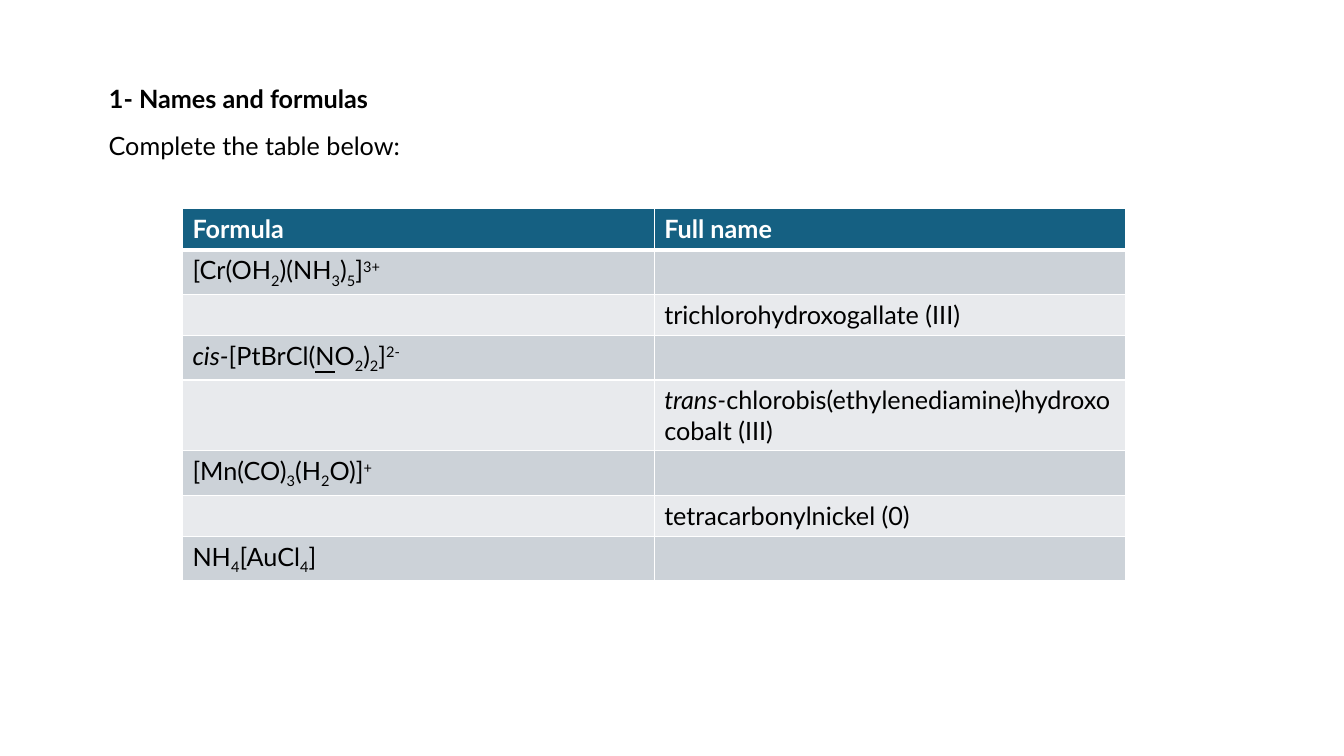
"""Build the exercise slide on names and formulas of coordination complexes."""
from lxml.etree import SubElement
from pptx import Presentation
from pptx.dml.color import RGBColor
from pptx.enum.text import MSO_ANCHOR, MSO_AUTO_SIZE, PP_ALIGN
from pptx.oxml.ns import qn
from pptx.util import Emu, Inches, Pt

SLIDE_WIDTH, SLIDE_HEIGHT = Inches(13.33), Inches(7.5)
COLUMN, ROW = SLIDE_WIDTH / 40, SLIDE_HEIGHT / 18
LEFT_MARGIN, LINE_HEIGHT, TABLE_ROW = 2.94, 0.96, 0.98
FONT, SIZE = "Lato", 18
BLACK, WHITE, HEADER = "000000", "FFFFFF", "156082"
BANDS = ("CCD2D8", "E8EAED")

HEADINGS = ("Formula", "Full name")
COMPLEXES = (
    ("[Cr(OH|_2|)(NH|_3|)|_5|]|^3+", ""),
    ("", "trichlorohydroxogallate (III)"),
    ("/cis-|[PtBrCl(|~N|O|_2|)|_2|]|^2-", ""),
    ("", "/trans-|chlorobis(ethylenediamine)hydroxo cobalt (III)"),
    ("[Mn(CO)|_3|(H|_2|O)]|^+", ""),
    ("", "tetracarbonylnickel (0)"),
    ("NH|_4|[AuCl|_4|]", ""),
)


def color(hex_value):
    """Return the colour for a hex string."""
    return RGBColor.from_string(hex_value)


def grid(left, top, width, height):
    """Turn grid columns and rows into a left, top, width and height."""
    units = (COLUMN, ROW, COLUMN, ROW)
    return [Emu(round(n * unit)) for n, unit in zip((left, top, width, height), units)]


def format_run(run, hex_value=BLACK, bold=False):
    """Give a run the slide's font with a colour and weight."""
    font = run.font
    font.name, font.size, font.bold = FONT, Pt(SIZE), bold
    font.color.rgb = color(hex_value)


def write_formula(paragraph, markup, hex_value, bold):
    """Write parts split by |, marked _ subscript, ^ superscript, / italic or ~ underline."""
    paragraph.font.size = Pt(SIZE)
    for part in filter(None, markup.split("|")):
        mark = part[0] if part[0] in "_^/~" else ""
        run = paragraph.add_run()
        run.text = part[len(mark):]
        format_run(run, hex_value, bold)
        if mark == "/":
            run.font.italic = True
        elif mark == "~":
            run.font.underline = True
        elif mark:
            baseline = {"_": "-25000", "^": "30000"}[mark]
            run.font._element.set("baseline", baseline)


def set_borders(cell, bottom_width):
    """Draw white lines around a cell, with its own bottom width."""
    properties = cell._tc.get_or_add_tcPr()
    for side, width in (("L", 1), ("R", 1), ("T", 1), ("B", bottom_width)):
        line = SubElement(properties, qn(f"a:ln{side}"), w=str(Pt(width)))
        fill = SubElement(line, qn("a:solidFill"))
        SubElement(fill, qn("a:srgbClr"), val=WHITE)


def fill_cell(cell, markup, fill, hex_value=BLACK, bold=False, bottom_width=1):
    """Write and format one table cell."""
    set_borders(cell, bottom_width)
    cell.fill.solid()
    cell.fill.fore_color.rgb = color(fill)
    write_formula(cell.text_frame.paragraphs[0], markup, hex_value, bold)


def set_line(shape, text, place, bold=False):
    """Place a shape and give it one line of left-aligned text."""
    shape.left, shape.top, shape.width, shape.height = place
    frame = shape.text_frame
    frame.text = text
    frame.word_wrap = True
    frame.auto_size = MSO_AUTO_SIZE.SHAPE_TO_FIT_TEXT
    frame.vertical_anchor = MSO_ANCHOR.TOP
    paragraph = frame.paragraphs[0]
    paragraph.alignment = PP_ALIGN.LEFT
    format_run(paragraph.runs[0], bold=bold)


def add_complex_table(slide):
    """Add the table of formulas and full names."""
    row_count = len(COMPLEXES) + 1
    place = grid(5.43, 4.97, 28.08, TABLE_ROW * row_count)
    table = slide.shapes.add_table(row_count, len(HEADINGS), *place).table
    for index, heading in enumerate(HEADINGS):
        fill_cell(table.cell(0, index), heading, HEADER, WHITE, True, 3)
    for row_index, row in enumerate(COMPLEXES):
        for index, markup in enumerate(row):
            fill_cell(table.cell(row_index + 1, index), markup, BANDS[row_index % 2])


def main():
    """Build and save the slide."""
    presentation = Presentation()
    presentation.slide_width, presentation.slide_height = SLIDE_WIDTH, SLIDE_HEIGHT
    slide = presentation.slides.add_slide(presentation.slide_layouts[5])
    set_line(slide.shapes.title, "1- Names and formulas",
             grid(LEFT_MARGIN, 1.87, 21.36, LINE_HEIGHT), bold=True)
    place = grid(LEFT_MARGIN, 2.98, 33.63, LINE_HEIGHT)
    set_line(slide.shapes.add_textbox(*place), "Complete the table below:", place)
    add_complex_table(slide)
    presentation.save("out.pptx")


if __name__ == "__main__":
    main()
